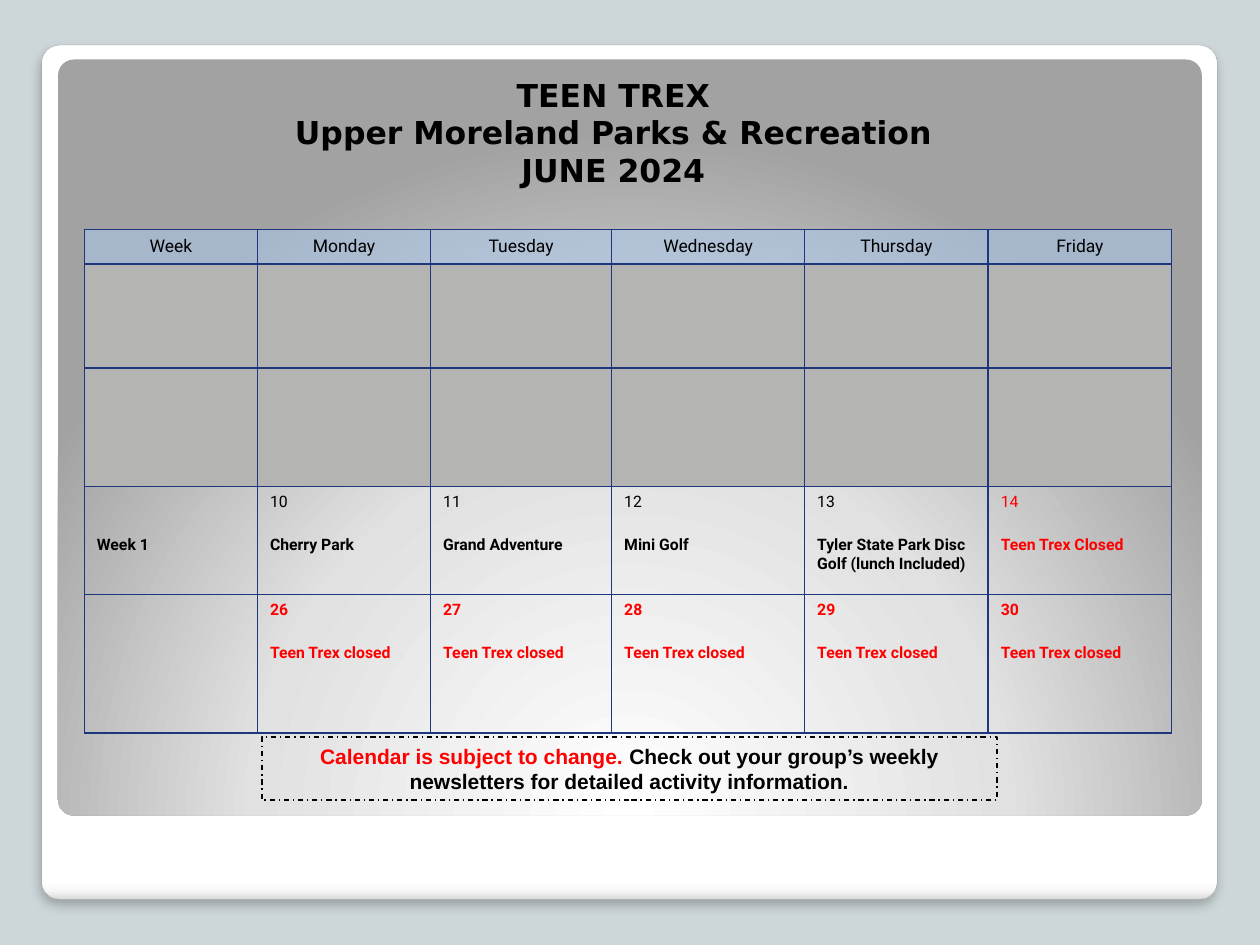
from dataclasses import dataclass

from lxml.etree import SubElement
from pptx import Presentation
from pptx.dml.color import RGBColor
from pptx.enum.dml import MSO_LINE
from pptx.enum.shapes import MSO_SHAPE
from pptx.enum.text import MSO_ANCHOR, MSO_AUTO_SIZE, PP_ALIGN
from pptx.oxml import parse_xml
from pptx.oxml.ns import nsdecls, qn
from pptx.util import Cm, Pt


@dataclass
class Theme:
    """Colours, fonts and type sizes of the calendar."""
    back: str = "CDD7D9"
    edge: str = "A4A4A4"
    grid: str = "1E377C"
    head: str = "ABCBF5"
    unused: str = "B4B4B3"
    ink: str = "000000"
    alert: str = "FF0000"
    title_font: str = "DejaVu Sans"
    table_font: str = "Roboto"
    note_font: str = "Arial"
    title_size: float = 18
    note_size: float = 12
    head_size: float = 10
    cell_size: float = 9


CARD_STOPS = [(0, "FFFFFF"), (98, "FFFFFF"), (99, "F7F7F7"), (100, "DADADA")]
PANEL_STOPS = [(0, "FFFFFF"), (55, "E1E1E1"), (100, "A2A2A2")]
DOWN = '<a:lin ang="5400000" scaled="0"/>'
FROM_BELOW = ('<a:path path="circle"><a:fillToRect l="50000" t="175000" '
              'r="50000" b="-75000"/></a:path>')
COLS = [3.49, 3.49, 3.65, 3.89, 3.7, 3.7]
ROWS = [0.69, 2.1, 2.39, 2.18, 2.79]
HEADS = ["Week", "Monday", "Tuesday", "Wednesday", "Thursday", "Friday"]
WEEK_1 = [("10", "Cherry Park"), ("11", "Grand Adventure"), ("12", "Mini Golf"),
          ("13", "Tyler State Park Disc Golf (lunch Included)"),
          ("14", "Teen Trex Closed")]
CLOSED_DAYS = ["26", "27", "28", "29", "30"]


class Calendar:
    """Draws calendar elements on the current slide in one style."""

    def __init__(self, s, theme):
        self.s, self.t = s, theme
        fill = s.background.fill
        fill.solid()
        fill.fore_color.rgb = RGBColor.from_string(theme.back)

    def style(self, font, name, size, color, bold=False):
        """Set face, size, colour and weight of a font."""
        font.name, font.size, font.bold = name, Pt(size), bold
        font.color.rgb = RGBColor.from_string(color)

    def card(self, box, stops, shade):
        """Add a rounded panel with a gradient and no outline."""
        sp = self.s.shapes.add_shape(MSO_SHAPE.ROUNDED_RECTANGLE, *map(Cm, box))
        sp.adjustments[0] = 0.021
        sp.shadow.inherit = False
        sp.line.fill.background()
        sp.fill.gradient()
        old = sp.element.spPr.find(qn("a:gradFill"))
        gs = "".join(f'<a:gs pos="{pos * 1000}"><a:srgbClr val="{c}"/></a:gs>'
                     for pos, c in stops)
        old.getparent().replace(old, parse_xml(
            f'<a:gradFill {nsdecls("a")} rotWithShape="1">'
            f'<a:gsLst>{gs}</a:gsLst>{shade}</a:gradFill>'))
        return sp

    def raise_card(self, sp):
        """Give a card its thin edge and soft shadow."""
        sp.line.color.rgb = RGBColor.from_string(self.t.edge)
        sp.line.width = Pt(0.16)
        effects = sp.element.spPr.find(qn("a:effectLst"))
        effects.append(parse_xml(
            f'<a:outerShdw {nsdecls("a")} blurRad="{Pt(6)}" dist="{Pt(4)}" '
            'dir="5400000" algn="t" rotWithShape="0"><a:srgbClr val="000000">'
            '<a:alpha val="25000"/></a:srgbClr></a:outerShdw>'))

    def title(self, box, lines):
        """Fill the title placeholder and bring it to the front."""
        sp = self.s.shapes.title
        sp.left, sp.top, sp.width, sp.height = map(Cm, box)
        tf = sp.text_frame
        tf.text = "\v".join(lines)
        tf.auto_size = MSO_AUTO_SIZE.NONE
        tf.vertical_anchor = MSO_ANCHOR.BOTTOM
        p = tf.paragraphs[0]
        p.alignment = PP_ALIGN.CENTER
        self.style(p.font, self.t.title_font, self.t.title_size, self.t.ink, True)
        sp.element.getparent().append(sp.element)

    def table(self, left, top):
        """Add the empty, ruled calendar grid."""
        tbl = self.s.shapes.add_table(len(ROWS), len(COLS), Cm(left), Cm(top),
                                      Cm(sum(COLS)), Cm(sum(ROWS))).table
        tbl.first_row = tbl.horz_banding = False
        for col, width in zip(tbl.columns, COLS):
            col.width = Cm(width)
        for row, height in zip(tbl.rows, ROWS):
            row.height = Cm(height)
        for cell in tbl.iter_cells():
            cell.fill.background()
            tcPr = cell._tc.get_or_add_tcPr()
            for i, side in enumerate(("lnL", "lnR", "lnT", "lnB")):
                tcPr.insert(i, parse_xml(
                    f'<a:{side} {nsdecls("a")} w="{Pt(1)}"><a:solidFill>'
                    f'<a:srgbClr val="{self.t.grid}"/></a:solidFill></a:{side}>'))
        return tbl

    def shade(self, cell, color, alpha=100):
        """Fill a cell, optionally see-through."""
        cell.fill.solid()
        cell.fill.fore_color.rgb = RGBColor.from_string(color)
        if alpha < 100:
            clr = cell._tc.tcPr.find(qn("a:solidFill"))[0]
            SubElement(clr, qn("a:alpha")).set("val", str(alpha * 1000))

    def head(self, cell, text):
        """Write a column heading."""
        self.shade(cell, self.t.head, 50)
        p = cell.text_frame.paragraphs[0]
        p.text, p.alignment = text, PP_ALIGN.CENTER
        self.style(p.font, self.t.table_font, self.t.head_size, self.t.ink)

    def day(self, cell, date, event, color, bold_date=False):
        """Write a date with its event below."""
        tf = cell.text_frame
        tf.text = date
        p = tf.add_paragraph()
        p.text, p.space_before = event, Pt(14.1)
        for p, bold in zip(tf.paragraphs, (bold_date, True)):
            self.style(p.font, self.t.table_font, self.t.cell_size, color, bold)

    def week(self, cell, text):
        """Write a week label level with the events."""
        cell.margin_top = Cm(1)
        p = cell.text_frame.paragraphs[0]
        p.text = text
        self.style(p.font, self.t.table_font, self.t.cell_size, self.t.ink, True)

    def note(self, box, parts):
        """Add a dash-dot box holding coloured runs."""
        sp = self.s.shapes.add_shape(MSO_SHAPE.RECTANGLE, *map(Cm, box))
        sp.shadow.inherit = False
        sp.fill.background()
        sp.line.color.rgb = RGBColor.from_string(self.t.ink)
        sp.line.width = Pt(0.75)
        sp.line.dash_style = MSO_LINE.DASH_DOT
        tf = sp.text_frame
        tf.word_wrap = True
        tf.vertical_anchor = MSO_ANCHOR.TOP
        p = tf.paragraphs[0]
        p.alignment = PP_ALIGN.CENTER
        for text, color in parts:
            r = p.add_run()
            r.text = text
            self.style(r.font, self.t.note_font, self.t.note_size, color, True)


def main():
    """Build the June calendar slide."""
    prs = Presentation()
    prs.slide_width, prs.slide_height = Cm(25.4), Cm(19.05)
    t = Theme()
    cal = Calendar(prs.slides.add_slide(prs.slide_layouts[5]), t)
    cal.raise_card(cal.card((0.84, 0.91, 23.7, 17.22), CARD_STOPS, DOWN))
    cal.card((1.17, 1.2, 23.06, 15.24), PANEL_STOPS, FROM_BELOW)
    cal.title((2.74, 1.32, 19.25, 2.62),
              ["TEEN TREX", "Upper Moreland Parks & Recreation", "JUNE 2024"])
    tbl = cal.table(1.7, 4.63)
    for c, text in enumerate(HEADS):
        cal.head(tbl.cell(0, c), text)
        for r in (1, 2):
            cal.shade(tbl.cell(r, c), t.unused)
    cal.week(tbl.cell(3, 0), "Week 1")
    for c, (date, event) in enumerate(WEEK_1, 1):
        cal.day(tbl.cell(3, c), date, event, t.alert if date == "14" else t.ink)
    for c, date in enumerate(CLOSED_DAYS, 1):
        cal.day(tbl.cell(4, c), date, "Teen Trex closed", t.alert, True)
    cal.note((5.28, 14.86, 14.82, 1.27),
             [("Calendar is subject to change. ", t.alert),
              ("Check out your group’s weekly newsletters for detailed "
               "activity information.", t.ink)])
    prs.save("out.pptx")


if __name__ == "__main__":
    main()
